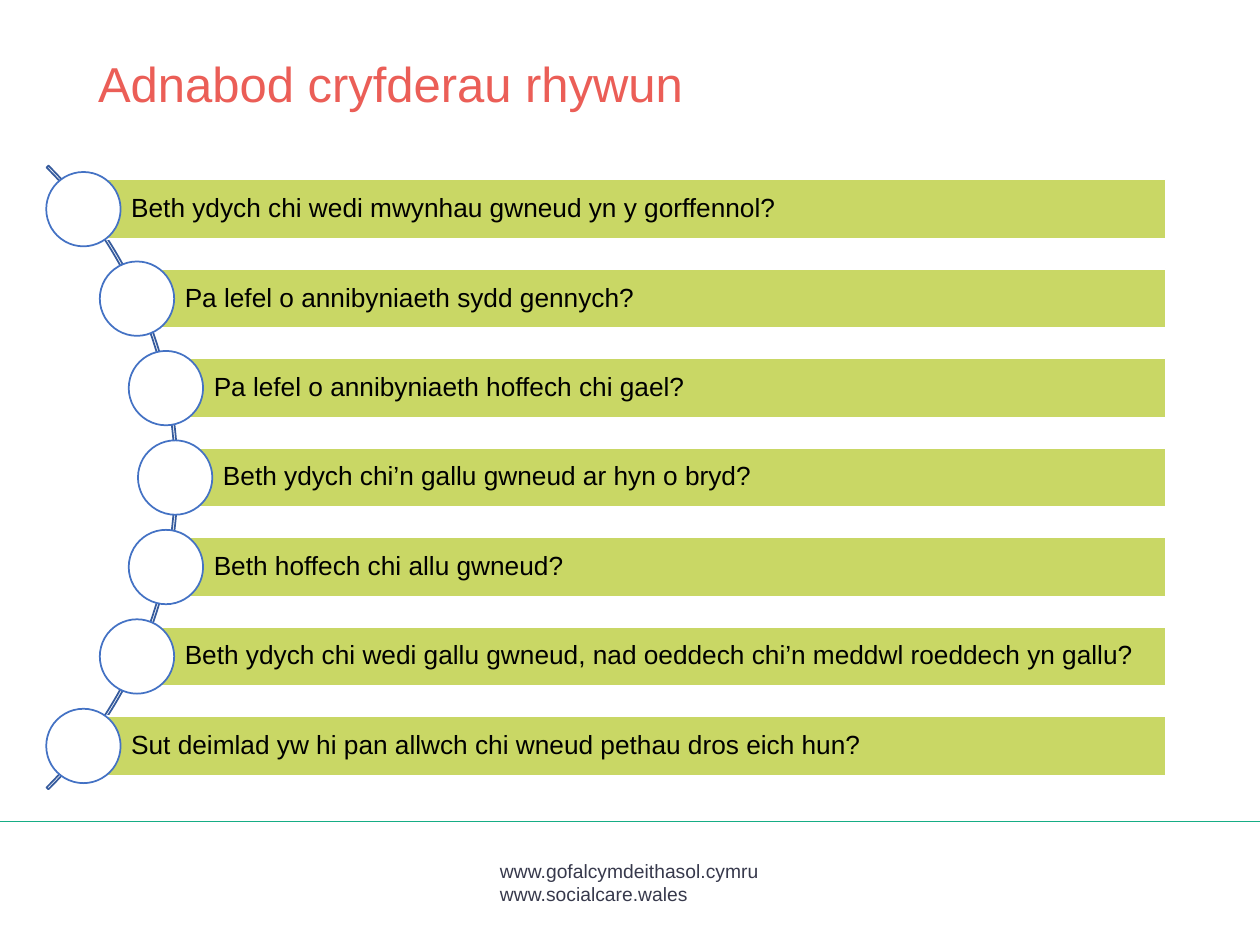
from math import sqrt

from pptx import Presentation
from pptx.dml.color import RGBColor
from pptx.enum.shapes import MSO_CONNECTOR as CONN, MSO_SHAPE as SHAPE
from pptx.enum.text import MSO_ANCHOR as ANCHOR, PP_ALIGN as ALIGN
from pptx.util import Inches, Pt
from lxml.etree import SubElement
from pptx.oxml.ns import qn

TITLE = "Adnabod cryfderau rhywun"
QUESTIONS = [
    "Beth ydych chi wedi mwynhau gwneud yn y gorffennol?",
    "Pa lefel o annibyniaeth sydd gennych?",
    "Pa lefel o annibyniaeth hoffech chi gael?",
    "Beth ydych chi’n gallu gwneud ar hyn o bryd?",
    "Beth hoffech chi allu gwneud?",
    "Beth ydych chi wedi gallu gwneud, nad oeddech chi’n meddwl roeddech yn gallu?",
    "Sut deimlad yw hi pan allwch chi wneud pethau dros eich hun?",
]
FOOTER = ["www.gofalcymdeithasol.cymru", "www.socialcare.wales"]

W, H = 10, 7.5
ARC_X, ARC_Y, ARC_SIZE = -2.09, 3.79, 7
RADIUS = 3.48
PITCH, BAR_H, DOT = 0.71, 0.47, 0.59
BAR_RIGHT = 9.25
BAR_INSETS = (0.38, 0.04, 0.04, 0.04)
BOX_INSETS = (0.1, 0.05, 0.1, 0.05)


def rgb(value):
    return RGBColor.from_string(value)


def add_shape(s, kind, box, line, fill=None):
    sp = s.shapes.add_shape(kind, *map(Inches, box))
    sp.shadow.inherit = False
    if fill:
        sp.fill.solid()
        sp.fill.fore_color.rgb = rgb(fill)
    else:
        sp.fill.background()
    sp.line.color.rgb = rgb(line)
    sp.line.width = Pt(1)
    return sp


def write(sp, lines, size, color, insets=BOX_INSETS, anchor=ANCHOR.TOP, spacing=None):
    tf = sp.text_frame
    left, top, right, bottom = map(Inches, insets)
    frame = {"word_wrap": True, "vertical_anchor": anchor, "margin_left": left,
             "margin_top": top, "margin_right": right, "margin_bottom": bottom}
    for name, value in frame.items():
        setattr(tf, name, value)
    tf.text = "\n".join(lines)
    for p in tf.paragraphs:
        p.alignment = ALIGN.LEFT
        p.line_spacing = spacing
        for r in p.runs:
            r.font.name = "Arial"
            r.font.size = Pt(size)
            r.font.color.rgb = rgb(color)


prs = Presentation()
prs.slide_width, prs.slide_height = Inches(W), Inches(H)
s = prs.slides.add_slide(prs.slide_layouts[6])

footer = s.shapes.add_textbox(*map(Inches, (3.87, 6.77, 2.26, 0.46)))
write(footer, FOOTER, 11, "37394C")

rule = s.shapes.add_connector(CONN.STRAIGHT, *map(Inches, (0, 6.52, W, 6.52)))
rule.line.color.rgb = rgb("16AD85")
rule.line.width = Pt(1)
SubElement(rule._element.spPr, qn("a:effectLst"))

title = s.shapes.add_textbox(*map(Inches, (0.68, 0.43, 7.46, 1)))
write(title, [TITLE], 28, "EB5E57", spacing=0.9)

arc_box = (ARC_X - ARC_SIZE / 2, ARC_Y - ARC_SIZE / 2, ARC_SIZE, ARC_SIZE)
arc = add_shape(s, SHAPE.BLOCK_ARC, arc_box, "365B9D")
for i, value in enumerate((189, 27, 0.003)):
    arc.adjustments[i] = value

for i, question in enumerate(QUESTIONS):
    dy = (i - (len(QUESTIONS) - 1) / 2) * PITCH
    x, y = ARC_X + sqrt(RADIUS ** 2 - dy ** 2), ARC_Y + dy
    bar = add_shape(s, SHAPE.RECTANGLE, (x, y - BAR_H / 2, BAR_RIGHT - x, BAR_H),
                    "FFFFFF", "C9D765")
    write(bar, [question], 15, "000000", BAR_INSETS, ANCHOR.MIDDLE, 0.9)
    add_shape(s, SHAPE.OVAL, (x - DOT / 2, y - DOT / 2, DOT, DOT), "4472C4", "FFFFFF")

prs.save("out.pptx")
